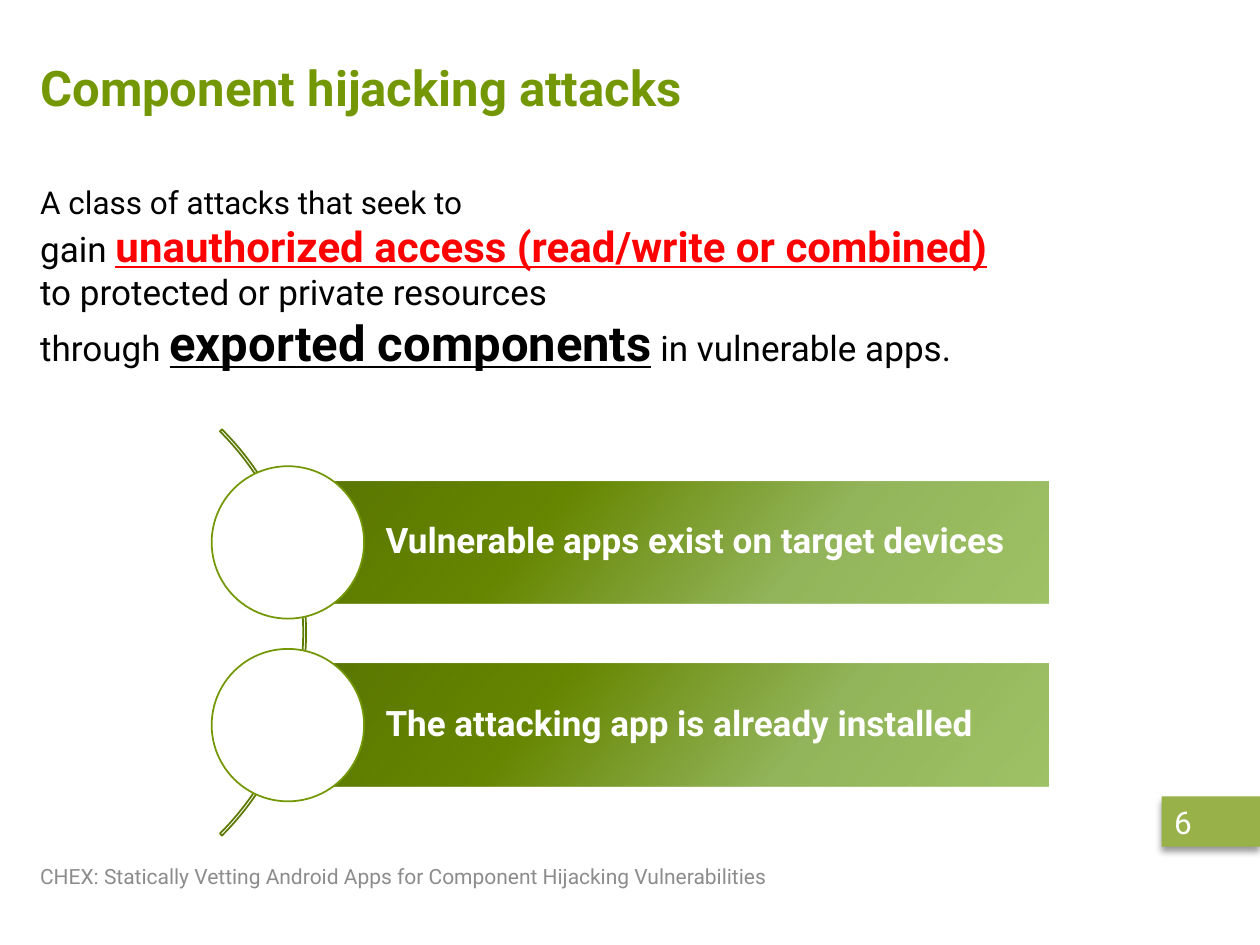
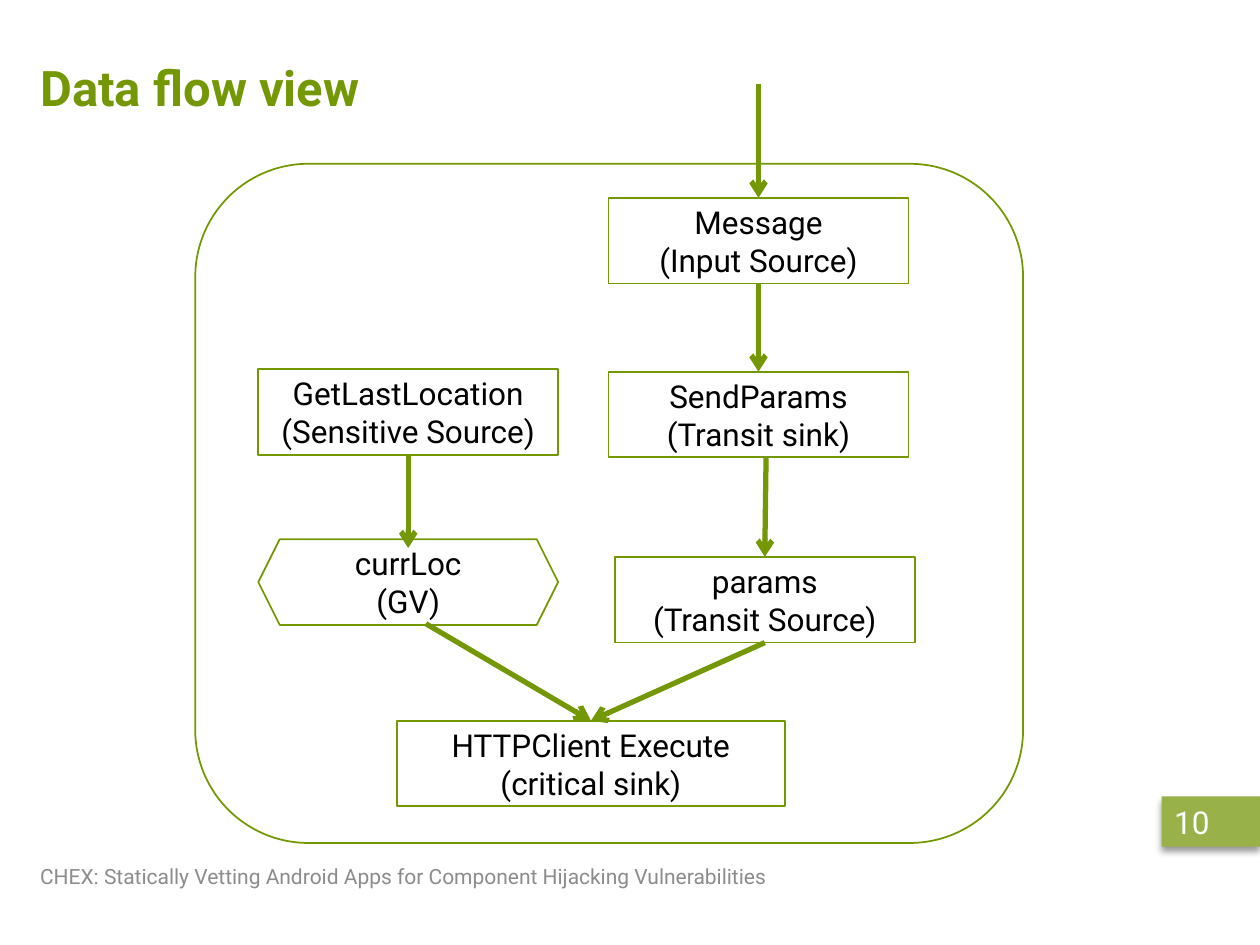
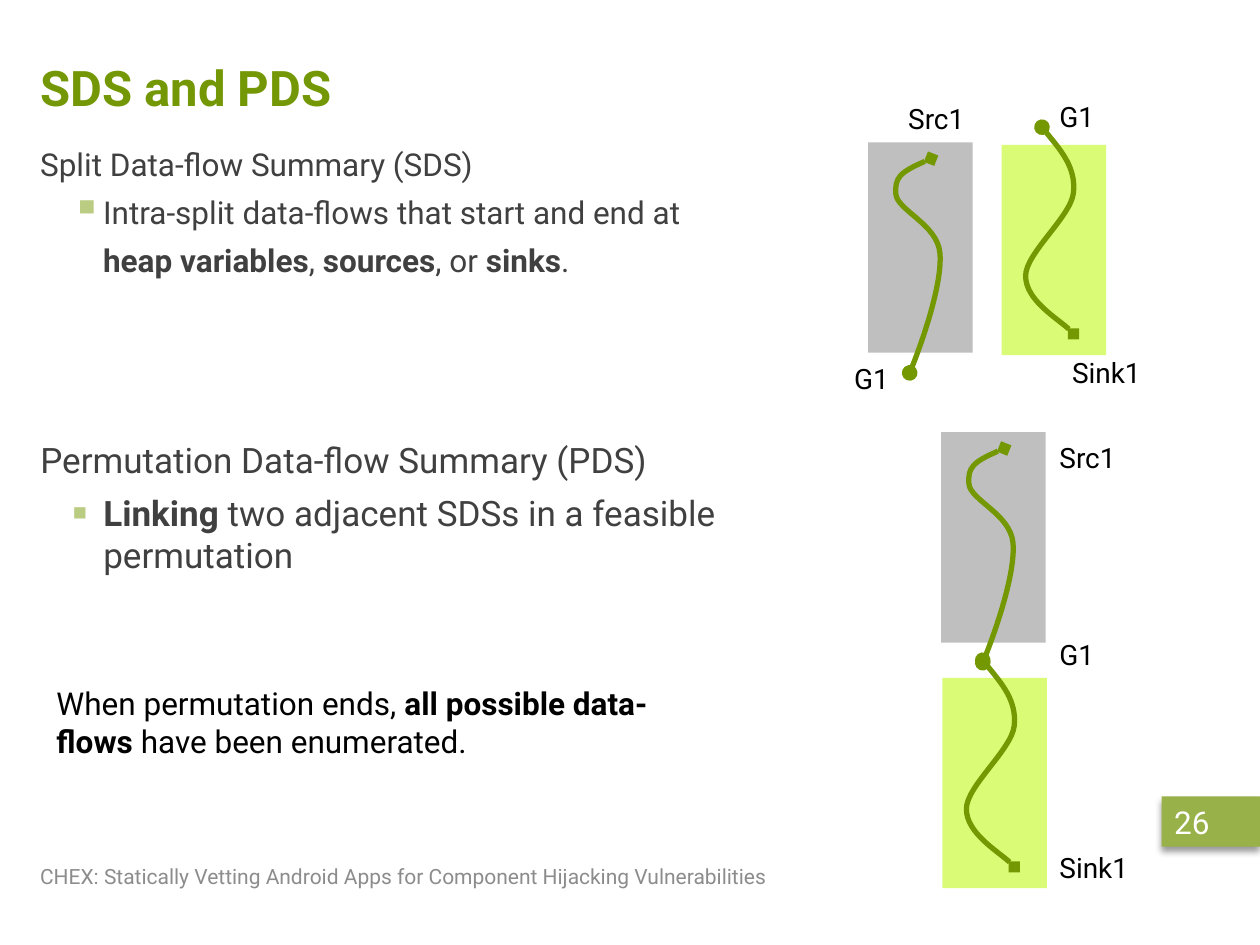
"""Build three slides on component hijacking and data-flow summaries."""
import pptx
import pptx.dml.color
import pptx.enum.shapes
import pptx.enum.text
import pptx.oxml
import pptx.oxml.ns
import pptx.util
from lxml import etree

Inches = pptx.util.Inches
Pt = pptx.util.Pt
RGBColor = pptx.dml.color.RGBColor
Preset = pptx.enum.shapes.MSO_SHAPE
Anchor = pptx.enum.text.MSO_ANCHOR
Align = pptx.enum.text.PP_ALIGN
qn = pptx.oxml.ns.qn

FONT = "Roboto"
GREEN = RGBColor(0x74, 0x98, 0x05)
OUTLINE = RGBColor(0x73, 0x98, 0x01)
ARC_GREEN = RGBColor(0x5D, 0x7A, 0x04)
BAND_GREEN = RGBColor(0x98, 0xB2, 0x49)
BULLET_GREEN = RGBColor(0xBA, 0xCC, 0x82)
LIME = RGBColor(0xDA, 0xFB, 0x76)
SILVER = RGBColor(0xBF, 0xBF, 0xBF)
FOOTER_GRAY = RGBColor(0x8C, 0x8C, 0x8C)
BODY_GRAY = RGBColor(0x40, 0x40, 0x40)
RED = RGBColor(0xFF, 0x00, 0x00)
BLACK = RGBColor(0x00, 0x00, 0x00)
WHITE = RGBColor(0xFF, 0xFF, 0xFF)

BAR_STOPS = (
    (0, RGBColor(0x8F, 0xB8, 0x4C), 85),
    (33, RGBColor(0x8E, 0xB1, 0x53), 95),
    (67, RGBColor(0x66, 0x86, 0x00), 100),
    (100, RGBColor(0x58, 0x74, 0x00), 100),
)
FOOTER = "CHEX: Statically Vetting Android Apps for Component Hijacking Vulnerabilities"

SOURCE_FLOW = ((0.5, 0.13), (0.26, 0.23), (0.21, 0.28), (0.22, 0.41), (0.23, 0.54),
               (0.55, 0.65), (0.57, 0.88), (0.59, 1.12), (0.41, 1.64), (0.33, 1.83))
SINK_FLOW = ((0.32, -0.14), (0.45, 0.02), (0.59, 0.18), (0.57, 0.38), (0.55, 0.57),
             (0.19, 0.86), (0.19, 1.04), (0.19, 1.23), (0.51, 1.42), (0.57, 1.5))


def add_xml(parent, tag, **attributes):
    """Append a drawing element to parent and return it."""
    values = {name: str(value) for name, value in attributes.items()}
    return etree.SubElement(parent, qn(tag), values)


def style_run(run, size, color, bold=False, underline=False):
    """Format one run."""
    run.font.name = FONT
    run.font.size = Pt(size)
    run.font.color.rgb = color
    run.font.bold = bold
    run.font.underline = underline


def write(shape, text, size, color, bold=False, align=Align.LEFT, anchor=Anchor.TOP):
    """Put evenly formatted text in a shape."""
    frame = shape.text_frame
    frame.text = text
    frame.word_wrap = True
    frame.auto_size = pptx.enum.text.MSO_AUTO_SIZE.NONE
    frame.vertical_anchor = anchor
    for paragraph in frame.paragraphs:
        paragraph.alignment = align
        for run in paragraph.runs:
            style_run(run, size, color, bold)


def write_runs(paragraph, size, color, parts):
    """Fill a paragraph with plain strings and (text, formatting) pairs."""
    for part in parts:
        text, changes = (part, {}) if isinstance(part, str) else part
        run = paragraph.add_run()
        run.text = text
        style_run(run, **{"size": size, "color": color, **changes})


def write_lines(shape, size, color, lines):
    """Fill a shape with paragraphs of mixed runs."""
    write(shape, "", size, color)
    frame = shape.text_frame
    for number, parts in enumerate(lines):
        paragraph = frame.add_paragraph() if number else frame.paragraphs[0]
        write_runs(paragraph, size, color, parts)


def write_outline(shape, size, items):
    """Fill a shape with (level, parts) items; level 1 has a square bullet."""
    write_lines(shape, size, BODY_GRAY, [parts for _, parts in items])
    for number, (level, _) in enumerate(items):
        paragraph = shape.text_frame.paragraphs[number]
        paragraph.level = level
        paragraph.space_before = Pt(6 if number else 0)
        properties = paragraph._p.get_or_add_pPr()
        properties.set("marL", str(Inches(0.5 if level else 0)))
        properties.set("indent", str(Inches(-0.25 if level == 1 else 0)))
        if level == 1:
            add_xml(add_xml(properties, "a:buClr"), "a:srgbClr", val=BULLET_GREEN)
            add_xml(properties, "a:buSzPct", val=130000)
            add_xml(properties, "a:buChar", char="▪")
        else:
            add_xml(properties, "a:buNone")


def place(shape, left, top, width, height):
    """Move and size a shape in inches."""
    shape.left, shape.top = Inches(left), Inches(top)
    shape.width, shape.height = Inches(width), Inches(height)


def add_box(slide, left, top, width, height):
    """Add an empty text box."""
    return slide.shapes.add_textbox(Inches(left), Inches(top), Inches(width), Inches(height))


def add_flat(slide, preset, box, fill=None, line=None):
    """Add a preset shape without a shadow."""
    shape = slide.shapes.add_shape(preset, *map(Inches, box))
    shape.shadow.inherit = False
    if fill is None:
        shape.fill.background()
    else:
        shape.fill.solid()
        shape.fill.fore_color.rgb = fill
    if line is None:
        shape.line.fill.background()
    else:
        shape.line.color.rgb = line
        shape.line.width = Pt(1)
    return shape


def add_label(slide, text, left, top):
    """Add a small caption beside a flow."""
    write(add_box(slide, left, top, 0.85, 0.37), text, 16, BLACK)


def start_slide(deck, layout_index, title, number):
    """Add a slide with its title, footer and number band."""
    slide = deck.slides.add_slide(deck.slide_layouts[layout_index])
    heading = slide.shapes.title
    place(heading, 0.22, 0, 8.56, 0.97)
    write(heading, title, 28, GREEN, bold=True, anchor=Anchor.BOTTOM)
    write(add_box(slide, 0.22, 6.75, 6.84, 0.4), FOOTER, 12, FOOTER_GRAY, anchor=Anchor.MIDDLE)
    band = add_flat(slide, Preset.RECTANGLE, (9.22, 6.32, 0.78, 0.4), BAND_GREEN)
    write(band, str(number), 18, WHITE, anchor=Anchor.MIDDLE)
    effects = band._element.spPr.find(qn("a:effectLst"))
    shadow = add_xml(effects, "a:outerShdw", blurRad=Pt(4), dist=Pt(3), dir=5400000, rotWithShape=0)
    add_xml(add_xml(shadow, "a:srgbClr", val=BLACK), "a:alpha", val=40000)
    return slide


def add_condition(slide, text, top):
    """Add a gradient bar with a circle over its left end."""
    bar = add_flat(slide, Preset.RECTANGLE, (2.29, top, 6.03, 0.97), GREEN)
    bar.fill.gradient()
    bar.fill.gradient_angle = 140
    stops = bar._element.spPr.find(qn("a:gradFill")).find(qn("a:gsLst"))
    for stop in list(stops):
        stops.remove(stop)
    for position, color, opacity in BAR_STOPS:
        stop = add_xml(stops, "a:gs", pos=position * 1000)
        add_xml(add_xml(stop, "a:srgbClr", val=color), "a:alpha", val=opacity * 1000)
    write(bar, text, 20, WHITE, bold=True, anchor=Anchor.MIDDLE)
    bar.text_frame.margin_left = Inches(0.77)
    bar.text_frame.margin_right = Inches(0.06)
    bar.text_frame.paragraphs[0].line_spacing = 0.9
    add_flat(slide, Preset.OVAL, (1.68, top - 0.12, 1.21, 1.21), WHITE, GREEN)


def add_node(slide, text, left, top, width=2.38, preset=Preset.RECTANGLE):
    """Add a captioned step of the data flow."""
    node = add_flat(slide, preset, (left, top, width, 0.68), WHITE, OUTLINE)
    write(node, text, 18, BLACK, align=Align.CENTER, anchor=Anchor.MIDDLE)
    return node


def add_arrow(slide, start, end, source=None, target=None):
    """Draw an arrow, joined to the source's bottom and the target's top if given."""
    straight = pptx.enum.shapes.MSO_CONNECTOR.STRAIGHT
    arrow = slide.shapes.add_connector(straight, *map(Inches, start + end))
    if source is not None:
        arrow.begin_connect(source, 2)
    if target is not None:
        arrow.end_connect(target, 0)
    arrow.line.color.rgb = GREEN
    arrow.line.width = Pt(3)
    add_xml(arrow.line._get_or_add_ln(), "a:tailEnd", type="arrow")
    add_xml(arrow._element.spPr, "a:effectLst")


def add_split(slide, left, top, fill, flow, head, tail):
    """Add a split block and the curved flow that runs through it."""
    add_flat(slide, Preset.RECTANGLE, (left, top, 0.83, 1.67), fill)
    points = [(Inches(left + x), Inches(top + y)) for x, y in flow]
    builder = slide.shapes.build_freeform(*points[0])
    builder.add_line_segments(points[1:], close=False)
    curve = builder.convert_to_shape()
    curve.shadow.inherit = False
    curve.fill.background()
    curve.line.color.rgb = OUTLINE
    curve.line.width = Pt(3)
    outline = curve.line._get_or_add_ln()
    add_xml(outline, "a:headEnd", type=head)
    add_xml(outline, "a:tailEnd", type=tail)
    segments = list(curve._element.spPr.iter(qn("a:lnTo")))
    route = segments[0].getparent()
    for first in range(0, len(segments), 3):
        bend = add_xml(route, "a:cubicBezTo")
        for segment in segments[first:first + 3]:
            bend.append(segment[0])
            route.remove(segment)


def add_source_split(slide, left, top):
    """Add the split that runs from Src1 to G1."""
    add_split(slide, left, top, SILVER, SOURCE_FLOW, "diamond", "oval")


def add_sink_split(slide, left, top):
    """Add the split that runs from G1 to Sink1."""
    add_split(slide, left, top, LIME, SINK_FLOW, "oval", "diamond")


def build_attacks(deck):
    """Define the attack class and its two conditions."""
    slide = start_slide(deck, 5, "Component hijacking attacks", 6)
    access = {"size": 24, "color": RED, "bold": True, "underline": True}
    exported = {"size": 28, "bold": True, "underline": True}
    definition = add_box(slide, 0.22, 1.4, 8.39, 1.92)
    write_lines(definition, 20, BLACK, [
        [("A class of attacks that seek to", {"size": 18})],
        ["gain ", ("unauthorized access (read/write or combined)", access)],
        ["to protected or private resources"],
        ["through ", ("exported components", exported), " in vulnerable apps."],
    ])
    arc = add_flat(slide, Preset.BLOCK_ARC, (-2.13, 2.74, 4.56, 4.56), line=ARC_GREEN)
    for index, value in enumerate((189, 27, 0.005)):
        arc.adjustments[index] = value
    conditions = ("Vulnerable apps exist on target devices", "The attacking app is already installed")
    for row, condition in enumerate(conditions):
        add_condition(slide, condition, 3.82 + 1.45 * row)


def build_data_flow(deck):
    """Chart how sources reach the critical sink."""
    slide = start_slide(deck, 5, "Data flow view", 10)
    add_flat(slide, Preset.ROUNDED_RECTANGLE, (1.55, 1.3, 6.57, 5.39), WHITE, OUTLINE)
    location = add_node(slide, "GetLastLocation\n(Sensitive Source)", 2.05, 2.93)
    message = add_node(slide, "Message\n(Input Source)", 4.83, 1.57)
    add_node(slide, "currLoc\n(GV)", 2.05, 4.28, preset=Preset.HEXAGON)
    send = add_node(slide, "SendParams\n(Transit sink)", 4.83, 2.95)
    params = add_node(slide, "params\n(Transit Source)", 4.88, 4.42)
    execute = add_node(slide, "HTTPClient Execute\n(critical sink)", 3.15, 5.72, width=3.08)
    add_arrow(slide, (3.24, 3.61), (3.24, 4.35), source=location)
    add_arrow(slide, (6.02, 2.25), (6.02, 2.95), message, send)
    add_arrow(slide, (3.38, 4.95), (4.69, 5.72), target=execute)
    add_arrow(slide, (6.08, 3.63), (6.07, 4.42), target=params)
    add_arrow(slide, (6.07, 5.1), (4.69, 5.72), params, execute)
    add_arrow(slide, (6.02, 0.67), (6.02, 1.57), target=message)


def build_summaries(deck):
    """Compare split and permutation data-flow summaries."""
    slide = start_slide(deck, 1, "SDS and PDS", 26)
    strong = {"bold": True}
    permutation = slide.placeholders[1]
    place(permutation, 0.22, 3.43, 6.46, 1.35)
    write_outline(permutation, 20, [
        (0, ["Permutation Data-flow Summary (PDS)"]),
        (1, [("Linking", strong), " two adjacent SDSs in a feasible permutation"]),
    ])
    write_outline(add_box(slide, 0.22, 1.1, 5.71, 1.48), 18, [
        (0, ["Split Data-flow Summary (SDS)"]),
        (1, ["Intra-split data-flows that start and end at"]),
        (2, [("heap variables", strong), ", ", ("sources", strong), ", or ", ("sinks", strong), "."]),
    ])
    write_lines(add_box(slide, 0.35, 5.38, 5, 0.71), 18, BLACK, [
        ["When permutation ends, ", ("all possible data-flows ", strong), "have been enumerated."],
    ])
    add_source_split(slide, 6.89, 1.13)
    add_sink_split(slide, 7.95, 1.15)
    add_source_split(slide, 7.47, 3.43)
    add_sink_split(slide, 7.48, 5.38)
    for text, left, top in (
        ("G1", 6.68, 2.82), ("Src1", 7.11, 0.76), ("G1", 8.31, 0.74), ("Sink1", 8.41, 2.77),
        ("Src1", 8.31, 3.45), ("G1", 8.31, 5.01), ("Sink1", 8.31, 6.7),
    ):
        add_label(slide, text, left, top)


def main():
    """Build and save the deck."""
    deck = pptx.Presentation()
    deck.slide_width, deck.slide_height = Inches(10), Inches(7.5)
    build_attacks(deck)
    build_data_flow(deck)
    build_summaries(deck)
    deck.save("out.pptx")


if __name__ == "__main__":
    main()
